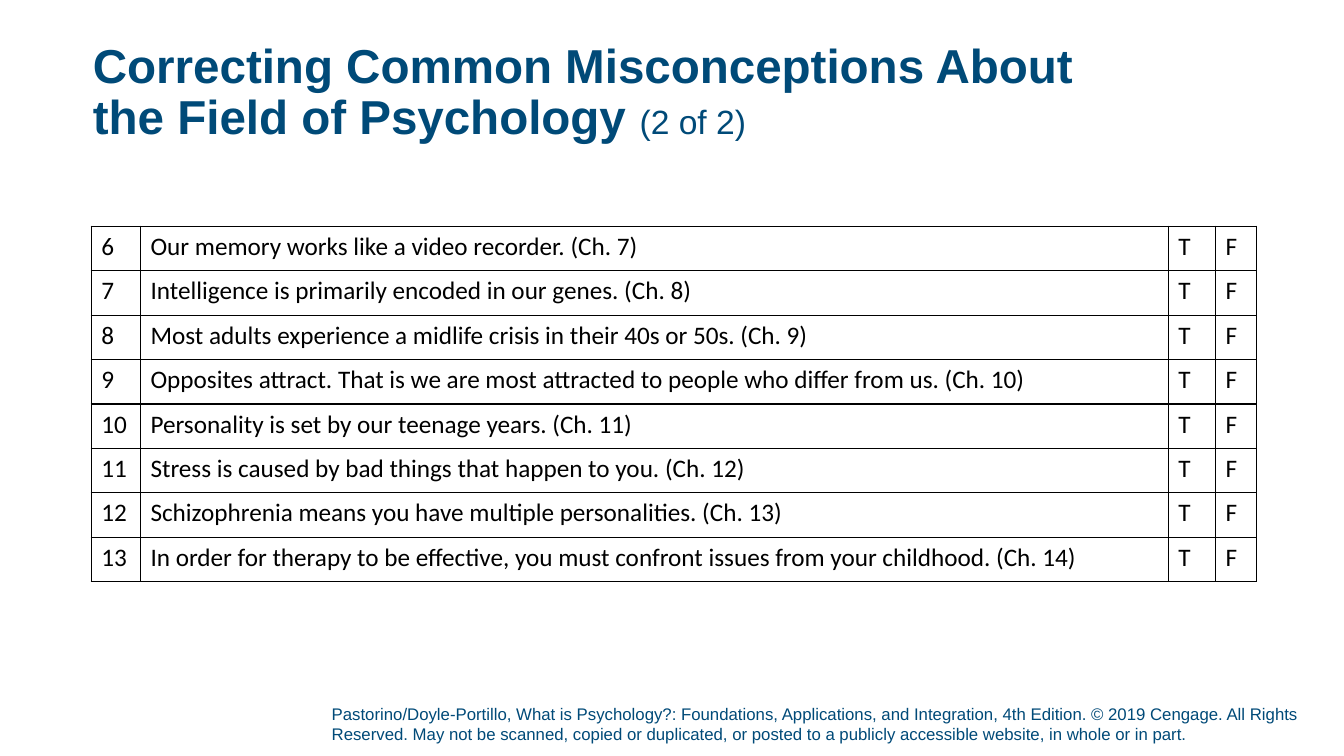
"""Build the slide on common misconceptions about the field of psychology."""
from dataclasses import dataclass

from lxml.etree import SubElement
from pptx import Presentation
from pptx.dml.color import RGBColor
from pptx.enum.text import MSO_ANCHOR as Anchor, MSO_AUTO_SIZE as AutoSize, PP_ALIGN as Align
from pptx.oxml.ns import qn
from pptx.slide import Slide
from pptx.table import _Cell as Cell
from pptx.text.text import TextFrame, _Paragraph as Paragraph
from pptx.util import Cm, Pt


@dataclass(frozen=True)
class Theme:
    heading_font: str = "Arial"
    table_font: str = "Calibri"
    blue: RGBColor = RGBColor(0x00, 0x4A, 0x78)
    black: RGBColor = RGBColor(0x00, 0x00, 0x00)
    title_size: int = 34
    part_size: int = 24
    table_size: int = 18
    credit_size: int = 12
    border_width: int = 1


@dataclass(frozen=True)
class Statement:
    number: int
    text: str
    chapter: int

    def cells(self) -> tuple[str, ...]:
        return str(self.number), f"{self.text} (Ch. {self.chapter})", "T", "F"


THEME = Theme()
FIRST_NUMBER = 6
FIRST_CHAPTER = 7
TEXTS = (
    "Our memory works like a video recorder.",
    "Intelligence is primarily encoded in our genes.",
    "Most adults experience a midlife crisis in their 40s or 50s.",
    "Opposites attract. That is we are most attracted to people who differ from us.",
    "Personality is set by our teenage years.",
    "Stress is caused by bad things that happen to you.",
    "Schizophrenia means you have multiple personalities.",
    "In order for therapy to be effective, you must confront issues from your childhood.",
)
STATEMENTS = [
    Statement(FIRST_NUMBER + index, text, FIRST_CHAPTER + index)
    for index, text in enumerate(TEXTS)
]
COLUMN_WIDTHS = (1.24, 25.9, 1.19, 1.04)
ROW_HEIGHT = 1.12
CREDIT = (
    "Pastorino/Doyle-Portillo, What is Psychology?: Foundations, Applications, and "
    "Integration, 4th Edition. © 2019 Cengage. All Rights Reserved. May not be scanned, "
    "copied or duplicated, or posted to a publicly accessible website, in whole or in part."
)


def set_frame(frame: TextFrame, anchor: Anchor, bottom: float = 0) -> None:
    frame.word_wrap = True
    frame.auto_size = AutoSize.NONE
    frame.vertical_anchor = anchor
    frame.margin_left = frame.margin_right = frame.margin_top = Cm(0)
    frame.margin_bottom = Cm(bottom)


def set_font(paragraph: Paragraph, name: str, size: int, color: RGBColor) -> None:
    paragraph.font.name = name
    paragraph.font.size = Pt(size)
    paragraph.font.color.rgb = color


def add_title(slide: Slide) -> None:
    title = slide.shapes.title
    title.left, title.top, title.width, title.height = Cm(2.34), Cm(1.02), Cm(29.21), Cm(2.69)
    set_frame(title.text_frame, Anchor.MIDDLE)
    paragraph = title.text_frame.paragraphs[0]
    paragraph.alignment = Align.LEFT
    paragraph.line_spacing = 0.9
    set_font(paragraph, THEME.heading_font, THEME.title_size, THEME.blue)
    for text, size, bold in (
        ("Correcting Common Misconceptions About ", THEME.title_size, True),
        ("the Field of Psychology ", THEME.title_size, True),
        ("(2 of 2)", THEME.part_size, False),
    ):
        run = paragraph.add_run()
        run.text = text
        run.font.size = Pt(size)
        run.font.bold = bold
        if text.endswith("About "):
            paragraph.add_line_break()


def set_borders(cell: Cell) -> None:
    properties = cell._tc.get_or_add_tcPr()
    for side in ("a:lnL", "a:lnR", "a:lnT", "a:lnB"):
        line = SubElement(properties, qn(side), w=str(Pt(THEME.border_width)))
        fill = SubElement(line, qn("a:solidFill"))
        SubElement(fill, qn("a:srgbClr"), val=str(THEME.black))


def add_statements(slide: Slide) -> None:
    frame = slide.shapes.add_table(
        len(STATEMENTS), len(COLUMN_WIDTHS), Cm(2.3), Cm(5.7),
        Cm(sum(COLUMN_WIDTHS)), Cm(ROW_HEIGHT * len(STATEMENTS)),
    )
    table = frame.table
    table.first_row = table.horz_banding = False
    for column, width in zip(table.columns, COLUMN_WIDTHS):
        column.width = Cm(width)
    for row, statement in zip(table.rows, STATEMENTS):
        row.height = Cm(ROW_HEIGHT)
        for cell, text in zip(row.cells, statement.cells()):
            cell.text = text
            set_borders(cell)
            cell.fill.background()
            set_font(cell.text_frame.paragraphs[0], THEME.table_font, THEME.table_size, THEME.black)


def add_credit(slide: Slide) -> None:
    box = slide.shapes.add_textbox(Cm(8.36), Cm(17.73), Cm(24.87), Cm(1.14))
    set_frame(box.text_frame, Anchor.BOTTOM, bottom=0.13)
    paragraph = box.text_frame.paragraphs[0]
    paragraph.text = CREDIT
    set_font(paragraph, THEME.heading_font, THEME.credit_size, THEME.blue)


def main() -> None:
    presentation = Presentation()
    presentation.slide_width, presentation.slide_height = Cm(33.87), Cm(19.05)
    slide = presentation.slides.add_slide(presentation.slide_layouts.get_by_name("Title Only"))
    add_title(slide)
    add_statements(slide)
    add_credit(slide)
    presentation.save("out.pptx")


if __name__ == "__main__":
    main()
